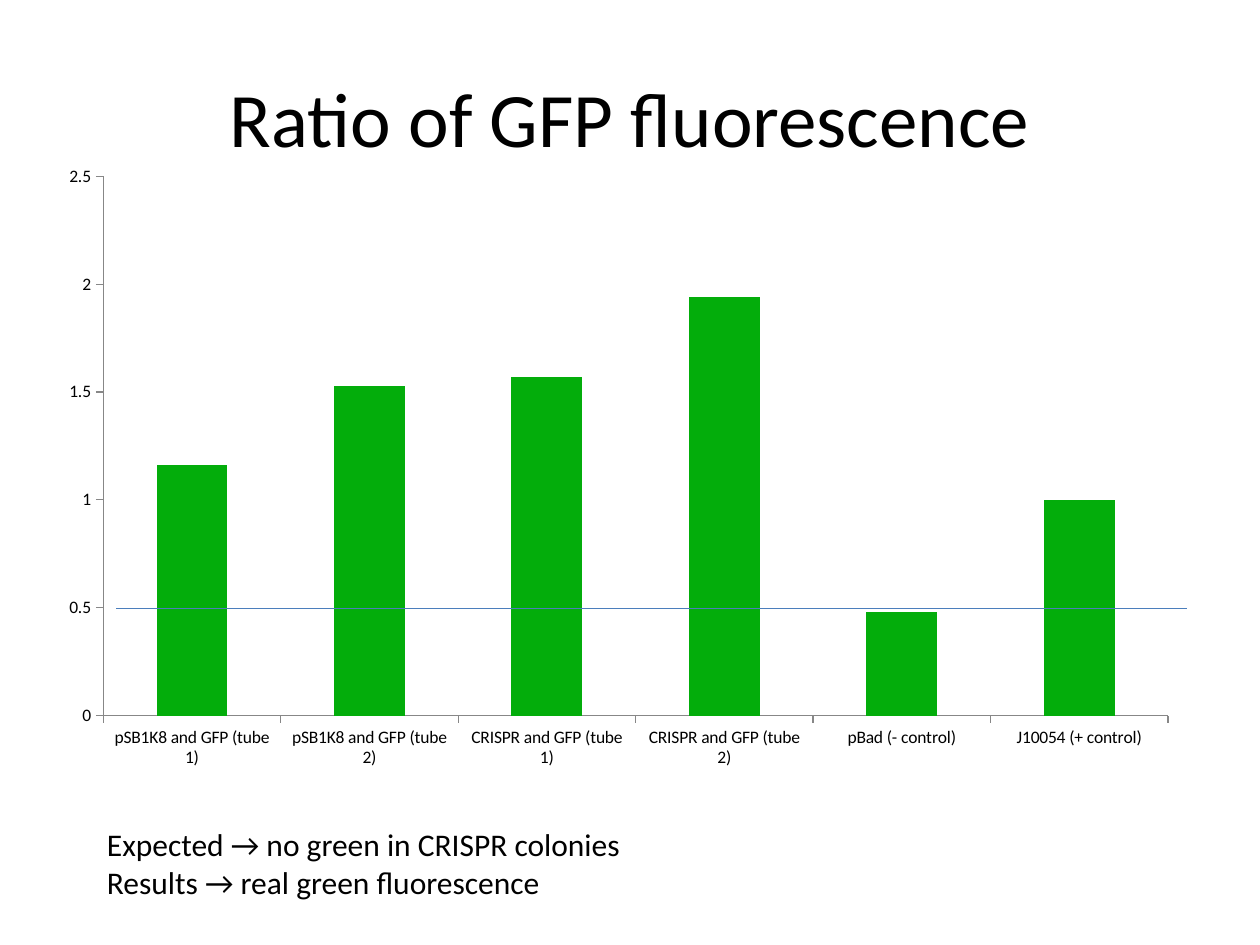
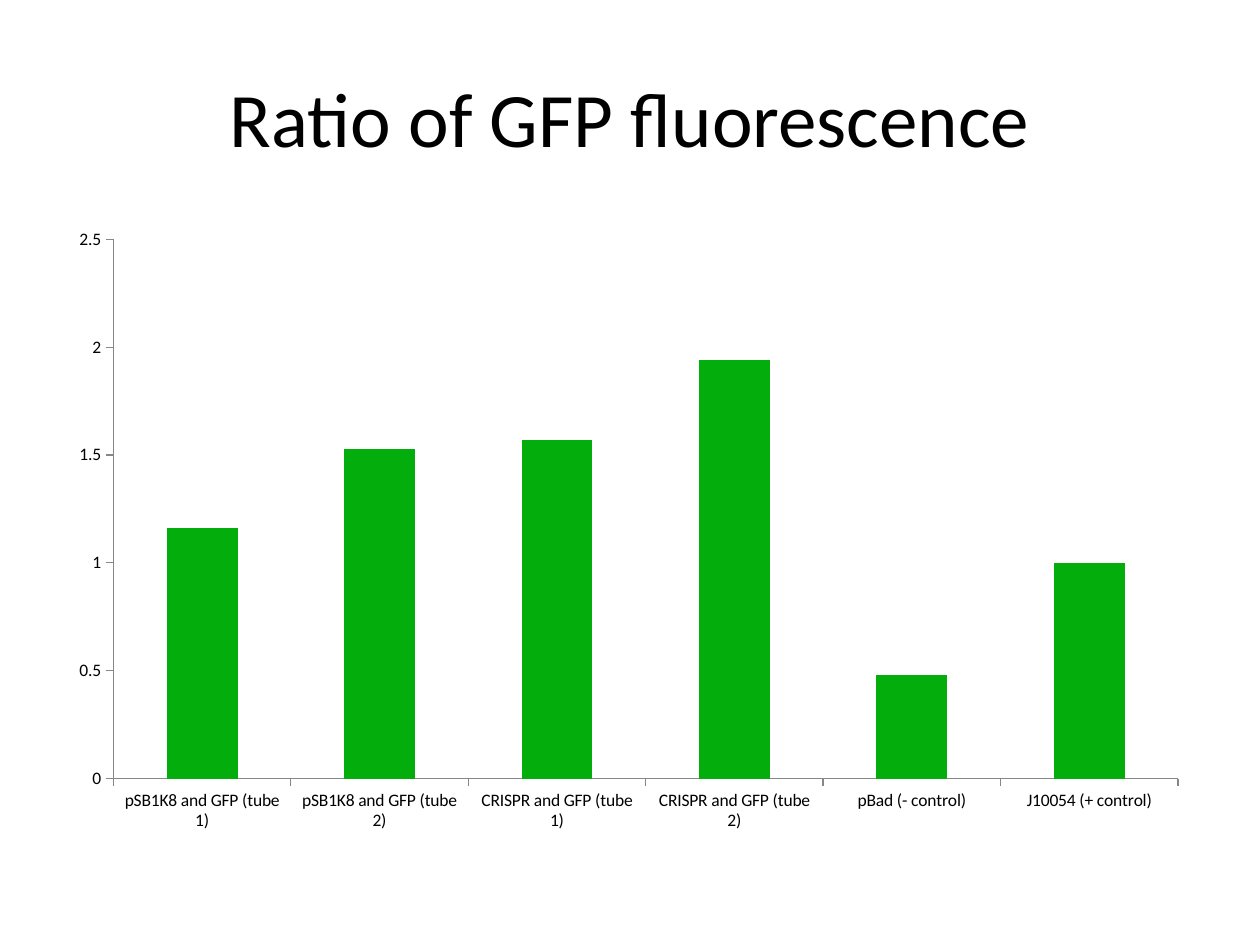
from dataclasses import dataclass

from lxml import etree
from pptx import Presentation, util as u
from pptx.chart.chart import Chart
from pptx.chart.data import CategoryChartData
from pptx.dml.color import RGBColor
from pptx.enum import chart as charts, shapes, text
from pptx.oxml import ns
from pptx.slide import Slide
from pptx.text.text import TextFrame

FONT = "Calibri"
COLOURS = {"ink": "000000", "bar": "03AD0B", "axis": "878787", "threshold": "4B7EBC"}
TITLE = "Ratio of GFP fluorescence"
FLUORESCENCE = {
    "pSB1K8 and GFP (tube 1)": 1.16,
    "pSB1K8 and GFP (tube 2)": 1.53,
    "CRISPR and GFP (tube 1)": 1.57,
    "CRISPR and GFP (tube 2)": 1.94,
    "pBad (- control)": 0.48,
    "J10054 (+ control)": 1,
}
FINDINGS = ("Expected → no green in CRISPR colonies", "Results → real green fluorescence")


@dataclass(frozen=True)
class Area:
    """A rectangle in inches."""
    left: float
    top: float
    width: float
    height: float

    def lengths(self) -> tuple[u.Length, ...]:
        return tuple(u.Inches(value) for value in (self.left, self.top, self.width, self.height))


TITLE_AREA = Area(0.5, 0.3, 9, 1.25)
CHART_AREAS = (Area(0.42, 1.25, 9, 4.95), Area(0.5, 1.75, 9, 4.95))
PLOT_AREA = Area(0.4, 0.15, 8.45, 4.28)  # measured from the chart's corner
FINDINGS_AREA = Area(0.75, 6.5, 6.25, 0.71)


def colour(name: str) -> RGBColor:
    return RGBColor.from_string(COLOURS[name])


def style_font(font: text, size: float) -> None:
    font.name = FONT
    font.size = u.Pt(size)
    font.color.rgb = colour("ink")


def write_lines(frame: TextFrame, lines: tuple[str, ...], size: float,
                align: text.PP_ALIGN = text.PP_ALIGN.LEFT) -> None:
    for index, line in enumerate(lines):
        para = frame.add_paragraph() if index else frame.paragraphs[0]
        para.alignment = align
        span = para.add_run()
        span.text = line
        style_font(span.font, size)


def place_plot(chart: Chart, chart_area: Area) -> None:
    """Fix the inner plot rectangle as fractions of the chart."""
    plot_area = chart.element.find(".//" + ns.qn("c:plotArea"))
    for old_layout in plot_area.findall(ns.qn("c:layout")):
        plot_area.remove(old_layout)
    layout = etree.Element(ns.qn("c:layout"))
    manual = etree.SubElement(layout, ns.qn("c:manualLayout"))
    settings = {
        "layoutTarget": "inner",
        "xMode": "edge",
        "yMode": "edge",
        "x": PLOT_AREA.left / chart_area.width,
        "y": PLOT_AREA.top / chart_area.height,
        "w": PLOT_AREA.width / chart_area.width,
        "h": PLOT_AREA.height / chart_area.height,
    }
    for tag, value in settings.items():
        etree.SubElement(manual, ns.qn(f"c:{tag}")).set("val", str(value))
    plot_area.insert(0, layout)


def add_fluorescence_chart(page: Slide, area: Area) -> None:
    data = CategoryChartData()
    data.categories = FLUORESCENCE.keys()
    data.add_series("Series 1", FLUORESCENCE.values())
    chart = page.shapes.add_chart(charts.XL_CHART_TYPE.COLUMN_CLUSTERED, *area.lengths(), data).chart
    chart.has_title = False
    chart.has_legend = False
    style_font(chart.font, 10)

    plot = chart.plots[0]
    plot.gap_width = 150
    plot.vary_by_categories = False
    bars = plot.series[0].format.fill
    bars.solid()
    bars.fore_color.rgb = colour("bar")

    for axis in (chart.category_axis, chart.value_axis):
        axis.has_major_gridlines = False
        axis.major_tick_mark = charts.XL_TICK_MARK.OUTSIDE
        axis.minor_tick_mark = charts.XL_TICK_MARK.NONE
        axis.format.line.color.rgb = colour("axis")
        axis.format.line.width = u.Pt(0.75)
    chart.value_axis.minimum_scale = 0
    chart.value_axis.maximum_scale = 2.5
    chart.value_axis.major_unit = 0.5
    place_plot(chart, area)


def add_threshold(page: Slide) -> None:
    height = u.Inches(4.83)
    line = page.shapes.add_connector(
        shapes.MSO_CONNECTOR.STRAIGHT, u.Inches(9.42), height, u.Inches(0.92), height)
    line.line.color.rgb = colour("threshold")
    line.line.width = u.Pt(0.75)
    etree.SubElement(line.element.spPr, ns.qn("a:effectLst"))


def add_findings(page: Slide) -> None:
    frame = page.shapes.add_textbox(*FINDINGS_AREA.lengths()).text_frame
    frame.word_wrap = True
    frame.auto_size = text.MSO_AUTO_SIZE.SHAPE_TO_FIT_TEXT
    write_lines(frame, FINDINGS, 18)


def add_chart_page(deck: Presentation, chart_area: Area) -> Slide:
    page = deck.slides.add_slide(deck.slide_layouts[5])
    title = page.shapes.title
    title.left, title.top, title.width, title.height = TITLE_AREA.lengths()
    title.text_frame.vertical_anchor = text.MSO_ANCHOR.MIDDLE
    write_lines(title.text_frame, (TITLE,), 44, text.PP_ALIGN.CENTER)
    add_fluorescence_chart(page, chart_area)
    return page


def main() -> None:
    deck = Presentation()
    deck.slide_width, deck.slide_height = u.Inches(10), u.Inches(7.5)
    threshold_page, _ = [add_chart_page(deck, area) for area in CHART_AREAS]
    add_threshold(threshold_page)
    add_findings(threshold_page)
    deck.save("out.pptx")


if __name__ == "__main__":
    main()
